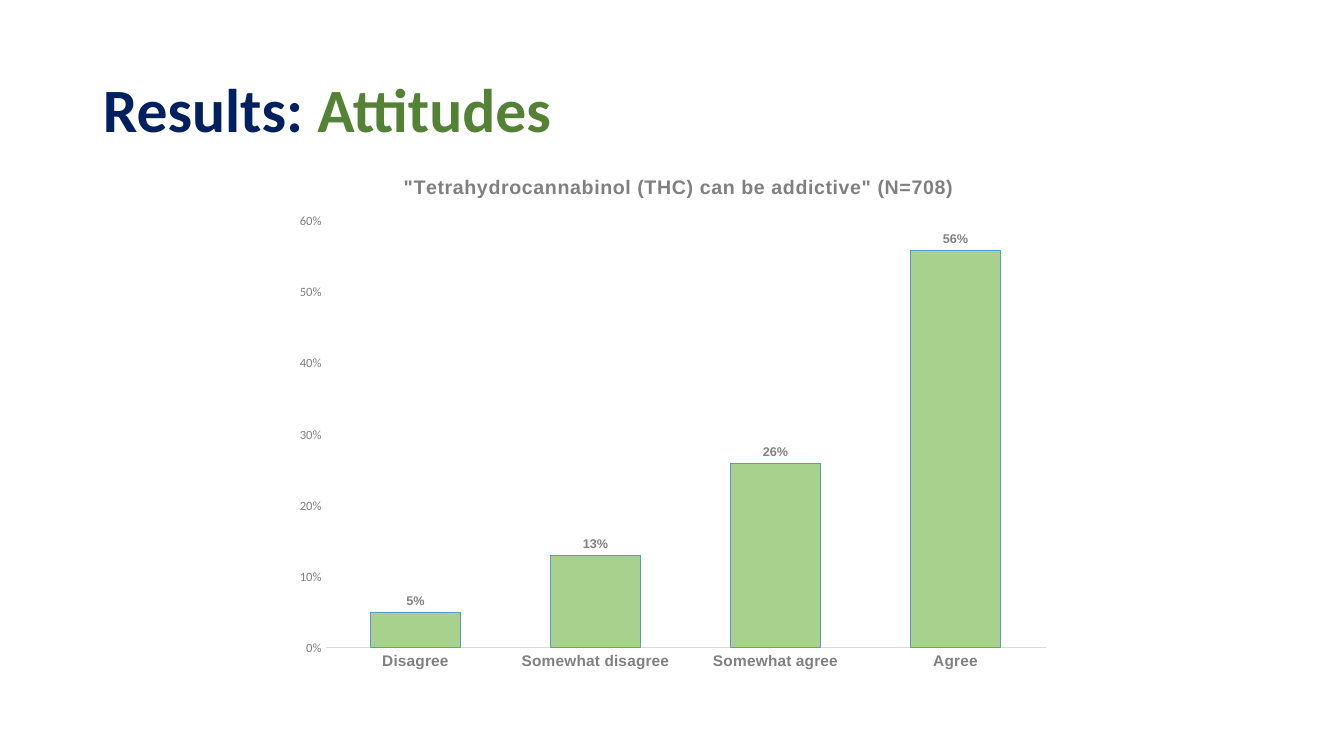
from lxml import etree
from pptx import Presentation
from pptx.chart.data import CategoryChartData
from pptx.dml.color import RGBColor
from pptx.enum.chart import XL_CHART_TYPE, XL_LABEL_POSITION, XL_TICK_MARK
from pptx.enum.text import MSO_ANCHOR
from pptx.oxml.ns import qn
from pptx.util import Inches, Pt

COLUMN = XL_CHART_TYPE.COLUMN_CLUSTERED
OUTSIDE = XL_LABEL_POSITION.OUTSIDE_END
NO_TICK = XL_TICK_MARK.NONE
MIDDLE = MSO_ANCHOR.MIDDLE
WIDE, HIGH = 13.33, 7.5
GRAY = "808080"


def paint(color, tone):
    color.rgb = RGBColor.from_string(tone)


def style(font, face, size, tone, bold=False):
    font.name, font.size, font.bold = face, Pt(size), bold
    paint(font.color, tone)


def span(box):
    left, top, width, height = box
    return [Inches(part) for part in
            (left * WIDE, top * HIGH, width * WIDE, height * HIGH)]


def add_title(slide, box, parts):
    title = slide.shapes.title
    title.left, title.top, title.width, title.height = span(box)
    frame = title.text_frame
    frame.word_wrap = True
    frame.vertical_anchor = MIDDLE
    line = frame.paragraphs[0]
    line.line_spacing = 0.9
    line.alignment = 1
    for text, tone in parts:
        run = line.add_run()
        run.text = text
        style(run.font, "Calibri", 44, tone, True)


def place(owner, spots, inner=False):
    layout = owner.find(qn("c:layout"))
    if layout is None:
        layout = etree.Element(qn("c:layout"))
        if inner:
            owner.insert(0, layout)
        else:
            owner.find(qn("c:tx")).addnext(layout)
    for child in list(layout):
        layout.remove(child)
    manual = etree.SubElement(layout, qn("c:manualLayout"))
    rules = [("layoutTarget", "inner")] if inner else []
    rules += [("xMode", "edge"), ("yMode", "edge")]
    rules += list(zip("xywh", spots))
    for name, value in rules:
        etree.SubElement(manual, qn("c:" + name)).set("val", str(value))


def add_chart(slide, box, head, votes):
    data = CategoryChartData(number_format="0%")
    data.categories = list(votes)
    data.add_series("Series 1", list(votes.values()))
    chart = slide.shapes.add_chart(COLUMN, *span(box), data).chart
    style(chart.font, "Calibri", 10, "000000")
    chart.has_legend = False
    chart.has_title = True
    run = chart.chart_title.text_frame.paragraphs[0].add_run()
    run.text = head
    style(run.font, "Arial", 14, GRAY, True)
    run.font._element.set("spc", "30")
    place(chart.chart_title._element, (0.15, 0.03))
    place(chart.plots[0]._element.getparent(), (0.054, 0.127, 0.927, 0.81), True)

    cats, vals = chart.category_axis, chart.value_axis
    for axis in (cats, vals):
        axis.major_tick_mark = axis.minor_tick_mark = NO_TICK
        axis.has_major_gridlines = False
    style(cats.tick_labels.font, "Arial", 11, GRAY, True)
    paint(cats.format.line.color, "D9D9D9")
    cats.format.line.width = Pt(0.75)
    style(vals.tick_labels.font, "Calibri", 9, GRAY)
    vals.tick_labels.number_format = "0%"
    vals.tick_labels.number_format_is_linked = False
    vals.format.line.fill.background()
    vals.minimum_scale, vals.maximum_scale, vals.major_unit = 0, 0.6, 0.1

    plot = chart.plots[0]
    plot.gap_width, plot.overlap = 100, -24
    plot.vary_by_categories = False
    bars = plot.series[0]
    bars.format.fill.solid()
    paint(bars.format.fill.fore_color, "A9D18E")
    paint(bars.format.line.color, "5998D0")
    bars.format.line.width = Pt(0.75)
    tags = bars.data_labels
    tags.show_value = True
    tags.position = OUTSIDE
    tags.number_format = "0%"
    tags.number_format_is_linked = False
    style(tags.font, "Arial", 9, GRAY, True)


def main():
    deck = Presentation()
    deck.slide_width, deck.slide_height = Inches(WIDE), Inches(HIGH)
    slide = deck.slides.add_slide(deck.slide_layouts[5])
    add_title(slide, (0.069, 0.053, 0.863, 0.193),
              [("Results: ", "002060"), ("Attitudes", "548235")])
    add_chart(slide, (0.211, 0.205, 0.578, 0.696),
              '"Tetrahydrocannabinol (THC) can be addictive" (N=708)',
              {"Disagree": 0.05, "Somewhat disagree": 0.13,
               "Somewhat agree": 0.26, "Agree": 0.56})
    deck.save("out.pptx")


if __name__ == "__main__":
    main()
